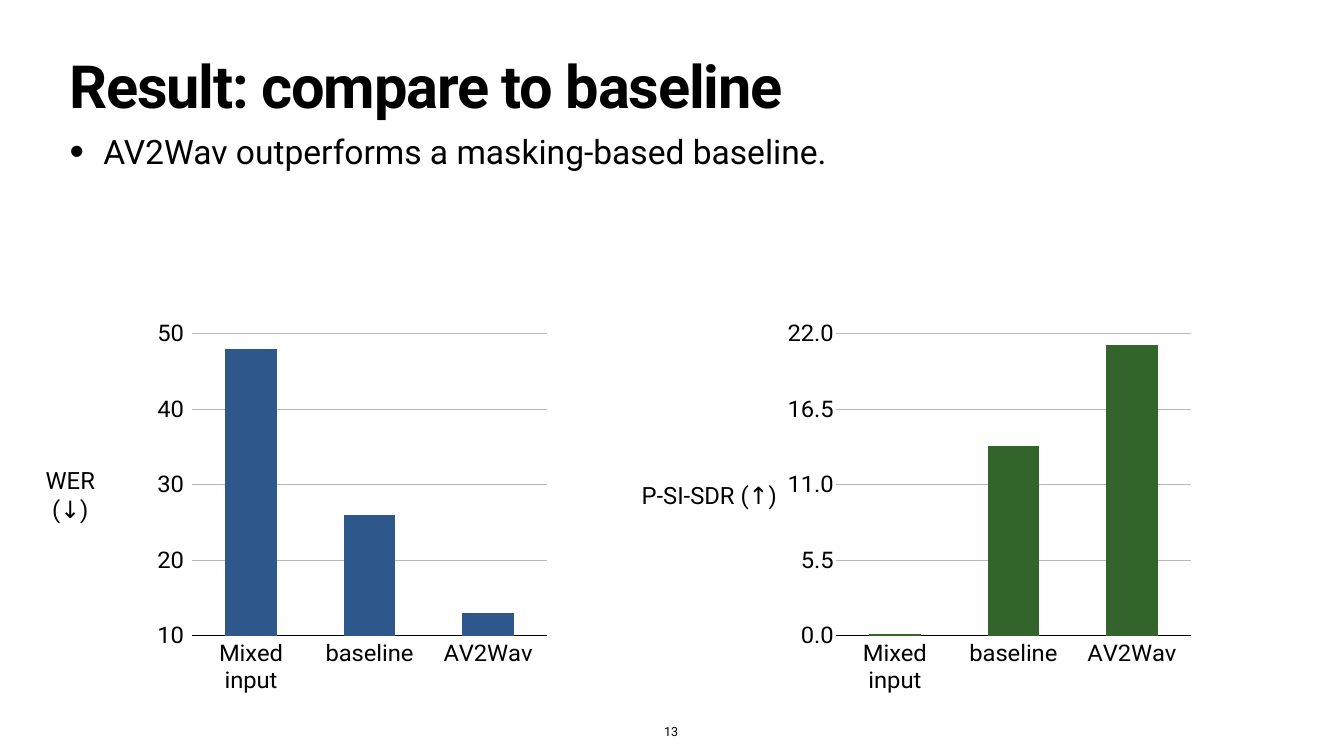
"""Build the slide that compares AV2Wav with a masking-based baseline."""
import pptx
import pptx.chart.data
import pptx.dml.color
import pptx.enum.chart
import pptx.enum.text
import pptx.oxml
import pptx.oxml.ns
import pptx.util

Inches, Pt = pptx.util.Inches, pptx.util.Pt
Align, Anchor = pptx.enum.text.PP_ALIGN, pptx.enum.text.MSO_ANCHOR

FONT = "Roboto"
HEADING = "Result: compare to baseline"
FINDING = "AV2Wav outperforms a masking-based baseline."
PAGE = "13"
SYSTEMS = ["Mixed input", "baseline", "AV2Wav"]
CHART_TOP, CHART_HEIGHT = 6.1, 7.67
LABEL_TOP, LABEL_HEIGHT = 9.48, 0.67
METRICS = [
    dict(label="WER (↓)", label_left=0.47, label_width=1.85, left=2.92, width=7.98,
         values=[48, 26, 13], color="2E578C", scale=(10, 50, 10),
         digits="#,##0_);\\(#,##0\\)", plot=(0.111, 0.884)),
    dict(label="P-SI-SDR (↑)", label_left=12.64, label_width=2.87, left=15.3, width=8.38,
         values=[0.1, 13.8, 21.2], color="32642C", scale=(0, 22, 5.5),
         digits="0.0", plot=(0.153, 0.842)),
]


def rgb(color):
    return pptx.dml.color.RGBColor.from_string(color)


def style_font(font, size, color="000000", bold=False):
    font.name, font.size, font.bold = FONT, Pt(size), bold
    font.color.rgb = rgb(color)


def write(shape, text, box, size, bold=False, align=Align.LEFT, anchor=Anchor.TOP,
          line_spacing=None, space_before=None, tracking=None, bullet=None,
          wrap=True, grow=False):
    shape.left, shape.top, shape.width, shape.height = map(Inches, box)
    frame = shape.text_frame
    frame.margin_left = frame.margin_right = Inches(0.06)
    frame.margin_top = frame.margin_bottom = Inches(0.06)
    frame.word_wrap, frame.vertical_anchor = wrap, anchor
    fit = pptx.enum.text.MSO_AUTO_SIZE
    frame.auto_size = fit.SHAPE_TO_FIT_TEXT if grow else fit.NONE
    paragraph = frame.paragraphs[0]
    paragraph.alignment = align
    paragraph.line_spacing = line_spacing
    if space_before is not None:
        paragraph.space_before = Pt(space_before)
    run = paragraph.add_run()
    run.text = text
    style_font(run.font, size, bold=bold)
    if tracking:
        run.font._element.set("spc", str(round(tracking * 100)))
    if bullet:
        mark, percent, indent = bullet
        properties = paragraph._p.get_or_add_pPr()
        properties.set("marL", str(Inches(indent)))
        properties.set("indent", str(-Inches(indent)))
        for tag, value in (("buSzPct", percent * 1000), ("buChar", mark)):
            key = "char" if tag == "buChar" else "val"
            element = properties.makeelement(pptx.oxml.ns.qn("a:" + tag), {key: str(value)})
            properties.append(element)


def place_plot(chart, x, width, y=0.071, height=0.813):
    edges = "".join(f'<c:{tag} val="{value}"/>' for tag, value in (
        ("layoutTarget", "inner"), ("xMode", "edge"), ("yMode", "edge"),
        ("x", x), ("y", y), ("w", width), ("h", height)))
    layout = pptx.oxml.parse_xml(
        f'<c:layout {pptx.oxml.ns.nsdecls("c")}><c:manualLayout>{edges}'
        '</c:manualLayout></c:layout>')
    area = chart._chartSpace.chart.plotArea
    for current in area.findall(pptx.oxml.ns.qn("c:layout")):
        area.remove(current)
    area.insert(0, layout)


def add_metric(slide, metric):
    data = pptx.chart.data.CategoryChartData()
    data.categories = SYSTEMS
    data.add_series("Series 1", metric["values"])
    box = (metric["left"], CHART_TOP, metric["width"], CHART_HEIGHT)
    enums = pptx.enum.chart
    chart = slide.shapes.add_chart(
        enums.XL_CHART_TYPE.COLUMN_CLUSTERED, *map(Inches, box), data).chart
    chart.has_title = chart.has_legend = False
    style_font(chart.font, 10, "5E5E5E")

    columns = chart.plots[0]
    columns.gap_width, columns.overlap, columns.vary_by_categories = 130, -10, False
    fill = columns.series[0].format.fill
    fill.solid()
    fill.fore_color.rgb = rgb(metric["color"])

    systems, scores = chart.category_axis, chart.value_axis
    for axis in (systems, scores):
        axis.major_tick_mark = axis.minor_tick_mark = enums.XL_TICK_MARK.NONE
        style_font(axis.tick_labels.font, 34)
    systems.tick_label_position = enums.XL_TICK_LABEL_POSITION.LOW
    scores.minimum_scale, scores.maximum_scale, scores.major_unit = metric["scale"]
    scores.tick_labels.number_format = metric["digits"]
    scores.tick_labels.number_format_is_linked = False
    scores.format.line.fill.background()
    for line, color in ((systems.format.line, "000000"),
                        (scores.major_gridlines.format.line, "B8B8B8")):
        line.color.rgb, line.width = rgb(color), Pt(1)
    place_plot(chart, *metric["plot"])

    label_box = (metric["label_left"], LABEL_TOP, metric["label_width"], LABEL_HEIGHT)
    write(slide.shapes.add_textbox(0, 0, 0, 0), metric["label"], label_box, 34,
          align=Align.CENTER, anchor=Anchor.MIDDLE, wrap=False, grow=True)


def main():
    deck = pptx.Presentation()
    deck.slide_width, deck.slide_height = Inches(26.67), Inches(15)
    slide = deck.slides.add_slide(deck.slide_layouts[1])
    write(slide.shapes.title, HEADING, (1.32, 1.18, 24.03, 1.57), 85, bold=True,
          line_spacing=0.8, tracking=-1.7)
    write(slide.placeholders[1], FINDING, (1.32, 2.63, 24.03, 9.03), 48,
          line_spacing=0.9, space_before=45, bullet=("•", 123, 0.67))
    write(slide.shapes.add_textbox(0, 0, 0, 0), PAGE, (13.07, 14.31, 0.5, 0.41), 18,
          align=Align.CENTER, anchor=Anchor.BOTTOM, grow=True)
    for metric in METRICS:
        add_metric(slide, metric)
    deck.save("out.pptx")


if __name__ == "__main__":
    main()
